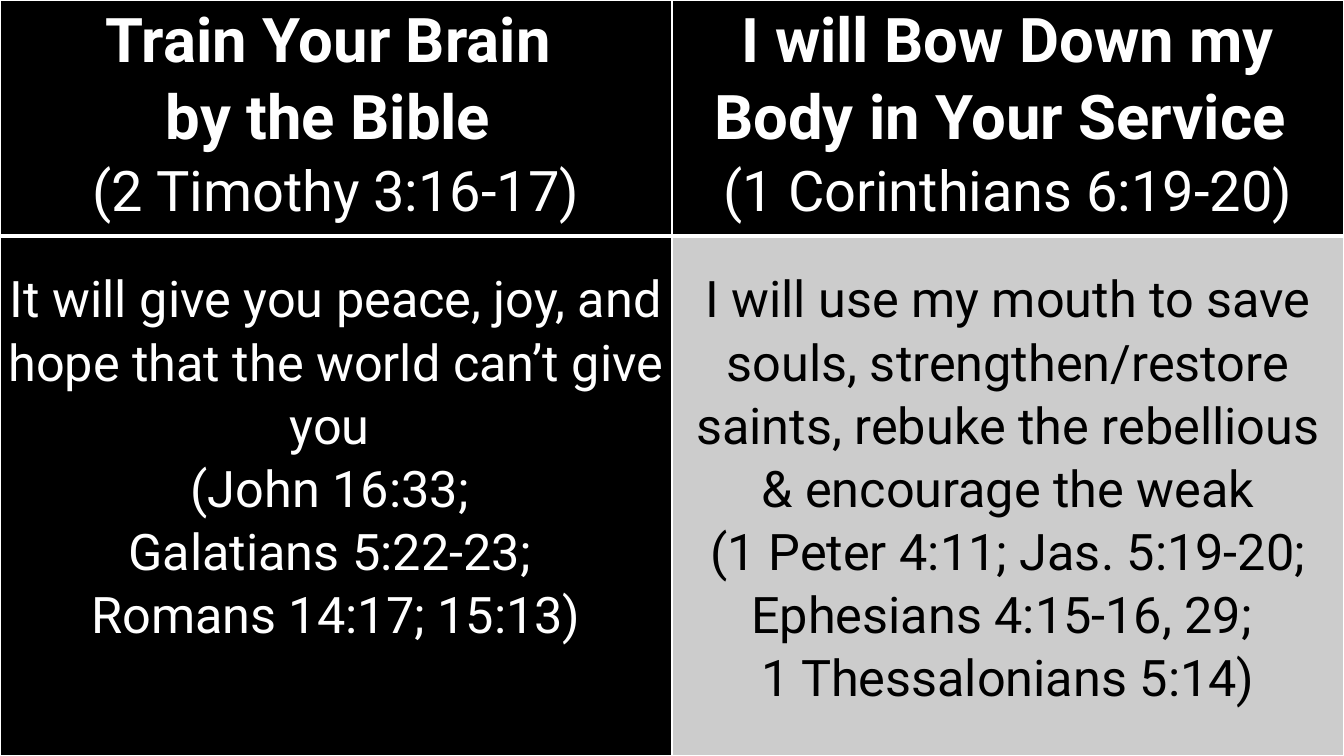
import pptx
import pptx.util
import pptx.dml.color
import pptx.enum.text
import pptx.oxml.ns
import lxml.etree

Inches, Pt = pptx.util.Inches, pptx.util.Pt
RGB = pptx.dml.color.RGBColor.from_string

THEME = {
    "font": "Roboto",
    "black": "000000",
    "white": "FFFFFF",
    "grey": "CCCCCC",
    "title": 44,
    "verse": 40,
    "body": 36,
    "spacing": 1.07,
}

HEADERS = [
    ["Train Your Brain ", "by the Bible ", "(2 Timothy 3:16-17)"],
    ["I will Bow Down my Body in Your Service ", "(1 Corinthians 6:19-20)"],
]
BODIES = [
    [
        "It will give you peace, joy, and hope that the world can’t give you ",
        "(John 16:33; ",
        "Galatians 5:22-23; ",
        "Romans 14:17; 15:13)",
    ],
    [
        "I will use my mouth to save souls, strengthen/restore saints, "
        "rebuke the rebellious & encourage the weak",
        " (1 Peter 4:11; Jas. 5:19-20; ",
        "Ephesians 4:15-16, 29; ",
        "1 Thessalonians 5:14)",
    ],
]
BODY_COLORS = [("black", "white"), ("grey", "black")]

WIDTH, HEIGHT = 13.33, 7.5
HEADER_HEIGHT = 2.34
SIDE_MARGIN = 0.07
BODY_TOP_MARGIN = 0.31


def set_borders(cell, bottom):
    tc_pr = cell._tc.get_or_add_tcPr()
    qn = pptx.oxml.ns.qn
    for i, (side, width) in enumerate([("L", 1), ("R", 1), ("T", 1), ("B", bottom)]):
        ln = lxml.etree.Element(qn(f"a:ln{side}"), w=str(Pt(width)))
        fill = lxml.etree.SubElement(ln, qn("a:solidFill"))
        lxml.etree.SubElement(fill, qn("a:srgbClr"), val=THEME["white"])
        tc_pr.insert(i, ln)


def fill_cell(cell, lines, fill, color, top=0, bottom_border=1):
    cell.margin_left = cell.margin_right = Inches(SIDE_MARGIN)
    cell.margin_top, cell.margin_bottom = Inches(top), 0
    cell.fill.solid()
    cell.fill.fore_color.rgb = RGB(THEME[fill])
    set_borders(cell, bottom_border)
    tf = cell.text_frame
    tf.text = "\n".join(text for text, size, bold in lines)
    for p, (text, size, bold) in zip(tf.paragraphs, lines):
        p.alignment = pptx.enum.text.PP_ALIGN.CENTER
        p.line_spacing = THEME["spacing"]
        font = p.runs[0].font
        font.name, font.size, font.bold = THEME["font"], Pt(THEME[size]), bold
        font.color.rgb = RGB(THEME[color])


def main():
    prs = pptx.Presentation()
    prs.slide_width, prs.slide_height = Inches(WIDTH), Inches(HEIGHT)
    s = prs.slides.add_slide(prs.slide_layouts[6])
    s.background.fill.solid()
    s.background.fill.fore_color.rgb = RGB(THEME["black"])

    table = s.shapes.add_table(
        2, len(HEADERS), 0, 0, prs.slide_width, prs.slide_height
    ).table
    table.rows[0].height = Inches(HEADER_HEIGHT)
    table.rows[1].height = Inches(HEIGHT - HEADER_HEIGHT)

    for col, (header, body, colors) in enumerate(zip(HEADERS, BODIES, BODY_COLORS)):
        *title, verse = header
        lines = [(text, "title", True) for text in title] + [(verse, "verse", False)]
        fill_cell(table.cell(0, col), lines, "black", "white", bottom_border=3)
        lines = [(text, "body", False) for text in body]
        fill_cell(table.cell(1, col), lines, *colors, top=BODY_TOP_MARGIN)

    prs.save("out.pptx")


if __name__ == "__main__":
    main()
